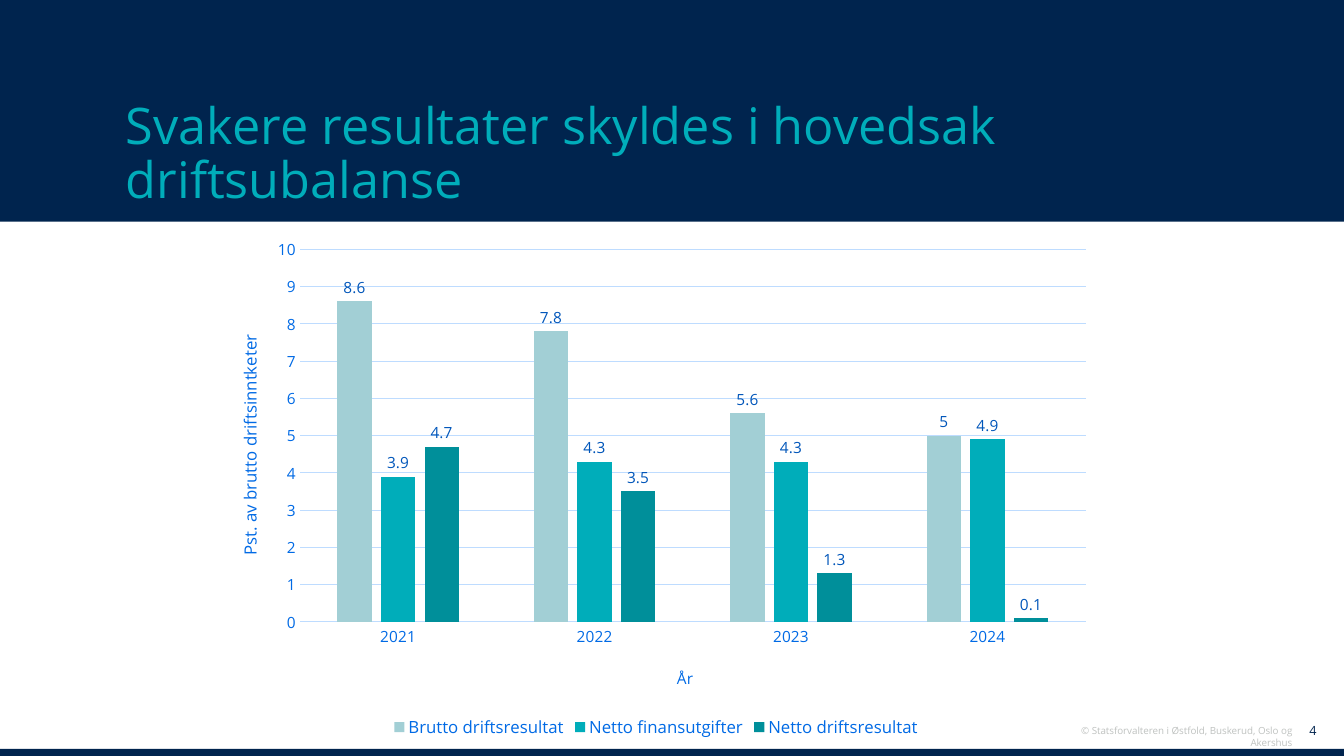
from lxml import etree
from pptx import Presentation
from pptx.chart.data import CategoryChartData
from pptx.dml.color import RGBColor
from pptx.enum.chart import XL_CHART_TYPE as CT, XL_LABEL_POSITION as LP
from pptx.enum.chart import XL_LEGEND_POSITION as LEG, XL_TICK_MARK as TICK
from pptx.enum.shapes import MSO_SHAPE
from pptx.enum.text import MSO_ANCHOR, MSO_AUTO_SIZE, PP_ALIGN
from pptx.oxml.ns import qn
from pptx.util import Pt

FONT = "Open Sans"
NAVY = RGBColor(0x00, 0x24, 0x4E)
TEAL = RGBColor(0x00, 0xAD, 0xBA)
PALE_TEAL = RGBColor(0xA2, 0xCF, 0xD5)
DARK_TEAL = RGBColor(0x00, 0x8F, 0x9A)
BLUE = RGBColor(0x00, 0x6A, 0xE5)
LABEL_BLUE = RGBColor(0x00, 0x56, 0xBA)
GRID_BLUE = RGBColor(0xBE, 0xDC, 0xFF)
GREY = RGBColor(0xBF, 0xC2, 0xC0)


def set_font(font, size, color):
    font.name = FONT
    font.size = Pt(size)
    font.bold = False
    font.color.rgb = color


def place(element, **values):
    layout = element.find(qn("c:layout"))
    if layout is None:
        layout = etree.Element(qn("c:layout"))
        element.insert(0, layout)
    manual = etree.SubElement(layout, qn("c:manualLayout"))
    for tag, value in values.items():
        etree.SubElement(manual, qn("c:" + tag)).set("val", str(value))


prs = Presentation()
prs.slide_width, prs.slide_height = Pt(960), Pt(540)
s = prs.slides.add_slide(prs.slide_layouts[5])

for top, height in [(0, 158.4), (535, 5)]:
    band = s.shapes.add_shape(MSO_SHAPE.RECTANGLE, 0, Pt(top), Pt(960), Pt(height))
    band.shadow.inherit = False
    band.fill.solid()
    band.fill.fore_color.rgb = NAVY
    band.line.fill.background()

for text, x, y, w, h, size, color, anchor in [
    ("4", 908.6, 512.6, 39, 18.7, 9, NAVY, MSO_ANCHOR.MIDDLE),
    ("© Statsforvalteren i Østfold, Buskerud, Oslo og Akershus",
     734.4, 514, 195.8, 15.8, 7, GREY, MSO_ANCHOR.TOP),
]:
    tf = s.shapes.add_textbox(Pt(x), Pt(y), Pt(w), Pt(h)).text_frame
    tf.word_wrap = True
    tf.vertical_anchor = anchor
    p = tf.paragraphs[0]
    p.text = text
    p.alignment = PP_ALIGN.RIGHT
    set_font(p.font, size, color)

title = s.shapes.title
s.shapes.element.append(title.element)
title.left, title.top, title.width, title.height = Pt(82.8), Pt(68.4), Pt(793.4), Pt(85)
tf = title.text_frame
tf.auto_size = MSO_AUTO_SIZE.NONE
tf.vertical_anchor = MSO_ANCHOR.BOTTOM
p = tf.paragraphs[0]
p.text = "Svakere resultater skyldes i hovedsak driftsubalanse"
p.alignment = PP_ALIGN.LEFT
p.line_spacing = 0.9
set_font(p.font, 36, TEAL)

series = [
    ("Brutto driftsresultat", (8.6, 7.8, 5.6, 5), PALE_TEAL),
    ("Netto finansutgifter", (3.9, 4.3, 4.3, 4.9), TEAL),
    ("Netto driftsresultat", (4.7, 3.5, 1.3, 0.1), DARK_TEAL),
]
data = CategoryChartData()
data.categories = ["2021", "2022", "2023", "2024"]
for name, values, _ in series:
    data.add_series(name, values)
chart = s.shapes.add_chart(
    CT.COLUMN_CLUSTERED, Pt(149), Pt(163.4), Pt(639.4), Pt(367.2), data).chart
chart.has_title = False
set_font(chart.font, 10, NAVY)
chart.has_legend = True
chart.legend.position = LEG.BOTTOM
chart.legend.include_in_layout = False
set_font(chart.legend.font, 12, BLUE)

plot = chart.plots[0]
plot.gap_width = 219
plot.overlap = -27
plot.vary_by_categories = False
for ser, (_, _, color) in zip(plot.series, series):
    ser.format.fill.solid()
    ser.format.fill.fore_color.rgb = color
    ser.invert_if_negative = False
    labels = ser.data_labels
    labels.show_value = True
    labels.position = LP.OUTSIDE_END
    set_font(labels.font, 11, LABEL_BLUE)
place(chart.element.find(".//" + qn("c:plotArea")), layoutTarget="inner",
      xMode="edge", yMode="edge", x=0.102, y=0.04, w=0.878, h=0.725)

for axis, text, size, x, y, rotation in [
    (chart.category_axis, "År", 11, 0.52, 0.845, 0),
    (chart.value_axis, "Pst. av brutto driftsinntketer", 12, 0.028, 0.2, -5400000),
]:
    axis.major_tick_mark = axis.minor_tick_mark = TICK.NONE
    set_font(axis.tick_labels.font, 11, BLUE)
    p = axis.axis_title.text_frame.paragraphs[0]
    p.text = text
    set_font(p.font, size, BLUE)
    element = axis.axis_title.element
    body = element.find(".//" + qn("a:bodyPr"))
    body.set("rot", str(rotation))
    body.set("vert", "horz")
    place(element, xMode="edge", yMode="edge", x=x, y=y)

val_axis = chart.value_axis
val_axis.minimum_scale, val_axis.maximum_scale, val_axis.major_unit = 0, 10, 1
val_axis.format.line.fill.background()
for line in (val_axis.major_gridlines.format.line, chart.category_axis.format.line):
    line.color.rgb = GRID_BLUE
    line.width = Pt(0.75)

prs.save("out.pptx")
